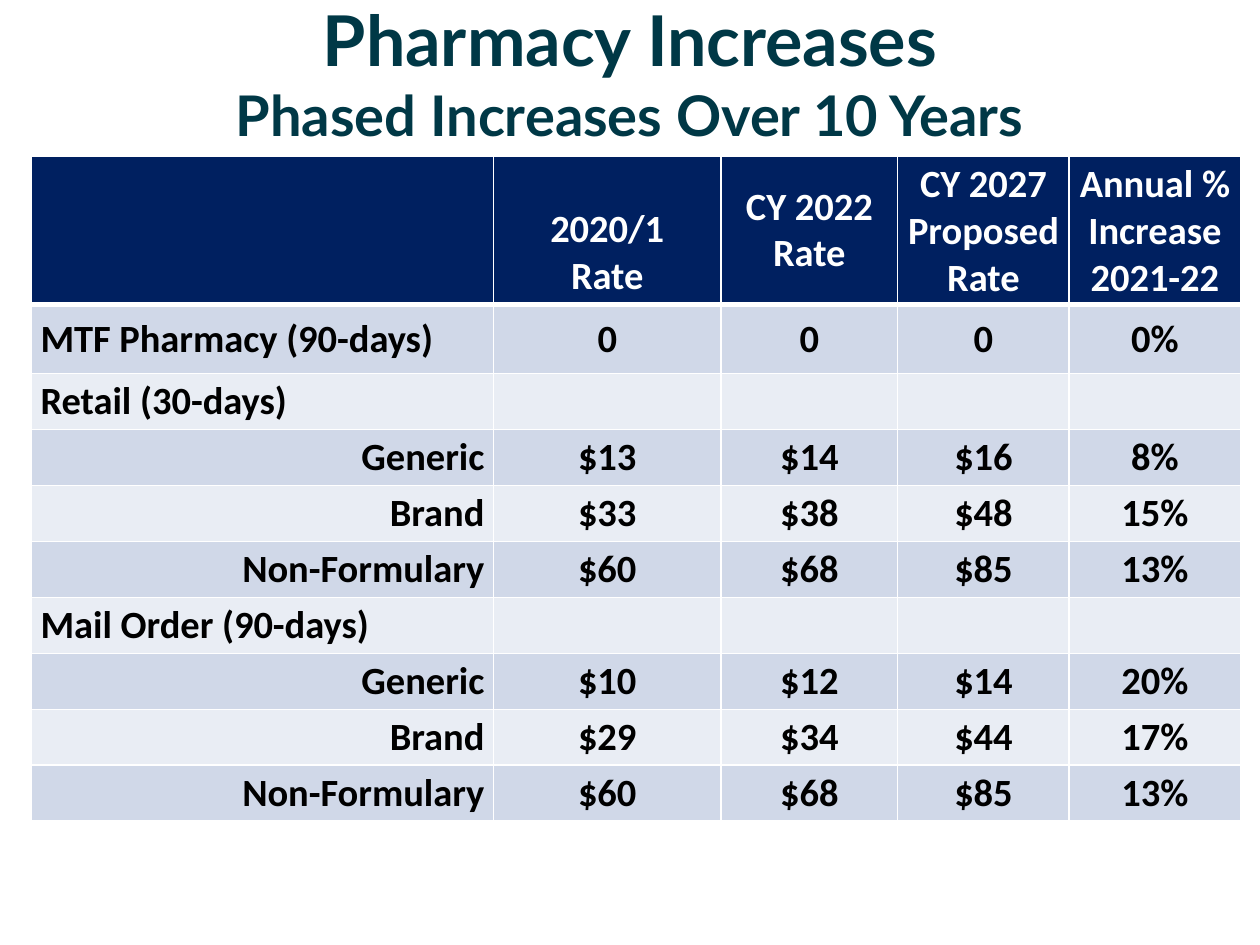
from pptx import Presentation
from pptx.dml.color import RGBColor as Rgb
from pptx.enum.text import MSO_ANCHOR as Anchor, PP_ALIGN as Align
from pptx.oxml import parse_xml
from pptx.util import Pt

NS = "http://schemas.openxmlformats.org/drawingml/2006/main"
NAVY, TEAL, WHITE, BLACK = "002060", "003846", "FFFFFF", "000000"
BANDS = ("D0D8E8", "E9EDF4")

WIDTHS = (264, 130, 101, 98, 98)
HEIGHTS = (84, 39.6) + (32,) * 8
HEAD = ("", "2020/1\nRate", "CY 2022\nRate", "CY 2027 Proposed Rate",
        "Annual %\nIncrease\n2021-22")
GROUPS = ("MTF Pharmacy (90-days)", "Retail (30-days)", "Mail Order (90-days)")
ROWS = (
    (GROUPS[0], "0", "0", "0", "0%"),
    (GROUPS[1], "", "", "", ""),
    ("Generic", "$13", "$14", "$16", "8%"),
    ("Brand", "$33", "$38", "$48", "15%"),
    ("Non-Formulary", "$60", "$68", "$85", "13%"),
    (GROUPS[2], "", "", "", ""),
    ("Generic", "$10", "$12", "$14", "20%"),
    ("Brand", "$29", "$34", "$44", "17%"),
    ("Non-Formulary", "$60", "$68", "$85", "13%"),
)


def color(code):
    return Rgb.from_string(code)


class Deck:
    def __init__(self, wide, high):
        self.show = Presentation()
        self.show.slide_width, self.show.slide_height = Pt(wide), Pt(high)
        self.slide = self.show.slides.add_slide(self.show.slide_layouts[6])

    def style(self, run, face, size, code):
        font = run.font
        font.name, font.size, font.bold = face, Pt(size), True
        font.color.rgb = color(code)

    def title(self, lines, sizes, left, top, wide, high):
        box = self.slide.shapes.add_textbox(Pt(left), Pt(top), Pt(wide), Pt(high))
        frame = box.text_frame
        frame.word_wrap = True
        frame.vertical_anchor = Anchor.MIDDLE
        para = frame.paragraphs[0]
        para.text = "\v".join(lines)
        para.alignment = Align.CENTER
        for run, size in zip(para.runs, sizes):
            self.style(run, "Lato", size, TEAL)

    def edge(self, cell, foot):
        """Draw white cell borders, with the bottom one foot points wide."""
        props = cell._tc.get_or_add_tcPr()
        for i, (side, size) in enumerate(zip("LRTB", (1, 1, 1, foot))):
            props.insert(i, parse_xml(
                f'<a:ln{side} xmlns:a="{NS}" w="{Pt(size)}"><a:solidFill>'
                f'<a:srgbClr val="{WHITE}"/></a:solidFill></a:ln{side}>'))

    def cell(self, cell, text, fill, ink, align, anchor, foot):
        cell.fill.solid()
        cell.fill.fore_color.rgb = color(fill)
        cell.margin_left = cell.margin_right = Pt(5.2)
        cell.margin_top = cell.margin_bottom = Pt(2.6)
        cell.vertical_anchor = anchor
        cell.text_frame.text = text
        for para in cell.text_frame.paragraphs:
            para.alignment = align
            for run in para.runs:
                self.style(run, "Calibri", 22, ink)
        self.edge(cell, foot)

    def table(self, left, top):
        grid = self.slide.shapes.add_table(
            len(HEIGHTS), len(WIDTHS), Pt(left), Pt(top),
            Pt(sum(WIDTHS)), Pt(sum(HEIGHTS))).table
        for col, wide in zip(grid.columns, WIDTHS):
            col.width = Pt(wide)
        for row, high in zip(grid.rows, HEIGHTS):
            row.height = Pt(high)
        for c, text in enumerate(HEAD):
            anchor = Anchor.BOTTOM if c == 1 else Anchor.MIDDLE
            self.cell(grid.cell(0, c), text, NAVY, WHITE, Align.CENTER, anchor, 3)
        for r, row in enumerate(ROWS):
            for c, text in enumerate(row):
                align = Align.CENTER
                if c == 0:
                    align = Align.LEFT if text in GROUPS else Align.RIGHT
                self.cell(grid.cell(r + 1, c), text, BANDS[r % 2], BLACK,
                          align, Anchor.MIDDLE, 1)


def main():
    deck = Deck(720, 540)
    deck.title(("Pharmacy Increases", "Phased Increases Over 10 Years"),
               (40, 32), 12, -12, 696, 106)
    deck.table(18, 89.5)
    deck.show.save("out.pptx")


if __name__ == "__main__":
    main()
